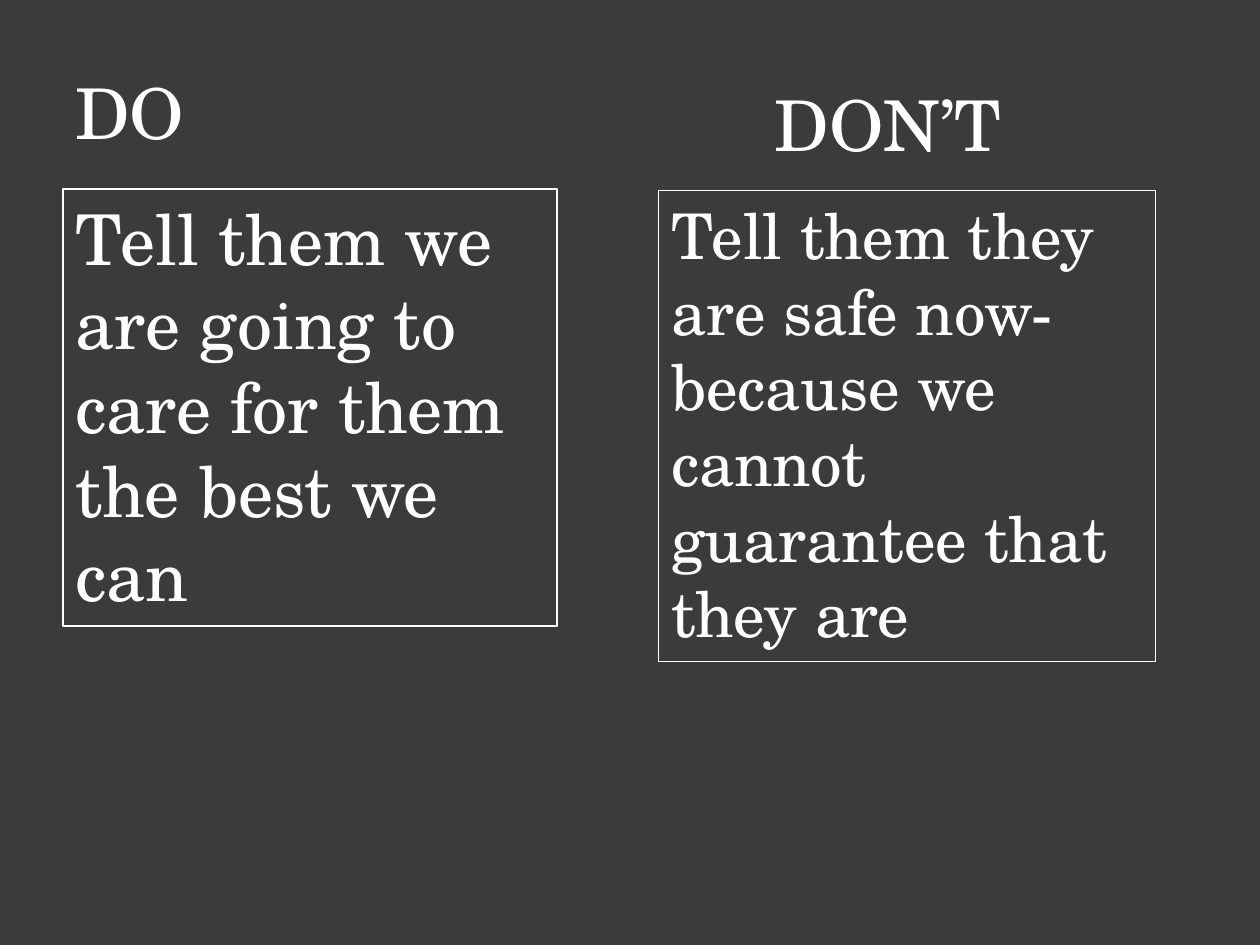
from pptx import Presentation
from pptx.dml.color import RGBColor
from pptx.enum.shapes import MSO_SHAPE
from pptx.enum.text import MSO_ANCHOR, PP_ALIGN
from pptx.util import Cm, Pt

CHARCOAL = RGBColor(0x3B, 0x3B, 0x3B)
WHITE = RGBColor(0xFF, 0xFF, 0xFF)
FONT = "TeX Gyre Schola"


def write(shape, wording, size, align):
    frame = shape.text_frame
    frame.word_wrap = True
    frame.vertical_anchor = MSO_ANCHOR.TOP
    paragraph = frame.paragraphs[0]
    paragraph.text = wording
    paragraph.alignment = align
    paragraph.font.name = FONT
    paragraph.font.size = Pt(size)
    paragraph.font.color.rgb = WHITE


prs = Presentation()
prs.slide_width, prs.slide_height = Cm(25.4), Cm(19.05)
slide = prs.slides.add_slide(prs.slide_layouts[6])

# Dark background
slide.background.fill.solid()
slide.background.fill.fore_color.rgb = CHARCOAL

# Headings: wording, alignment, left, top, width
headings = [
    ("DO", PP_ALIGN.LEFT, 1.27, 1.27, 10.59),
    ("DON’T", PP_ALIGN.CENTER, 13.03, 1.52, 9.53),
]
for wording, align, left, top, width in headings:
    heading = slide.shapes.add_textbox(Cm(left), Cm(top), Cm(width), Cm(2.97))
    heading.text_frame.margin_right = Cm(0.03)
    write(heading, wording, 40, align)

# Outlined advice boxes: wording, text size, left, top, width, height
advice = [
    ("Tell them we are going to care for them the best we can",
     40, 1.27, 3.81, 9.96, 8.81),
    ("Tell them they are safe now- because we cannot guarantee that they are",
     36, 13.28, 3.84, 10.01, 9.5),
]
for wording, size, left, top, width, height in advice:
    box = slide.shapes.add_shape(
        MSO_SHAPE.RECTANGLE, Cm(left), Cm(top), Cm(width), Cm(height))
    box.shadow.inherit = False
    box.fill.background()
    box.line.color.rgb = WHITE
    box.line.width = Pt(0.75)
    write(box, wording, size, PP_ALIGN.LEFT)

prs.save("out.pptx")
